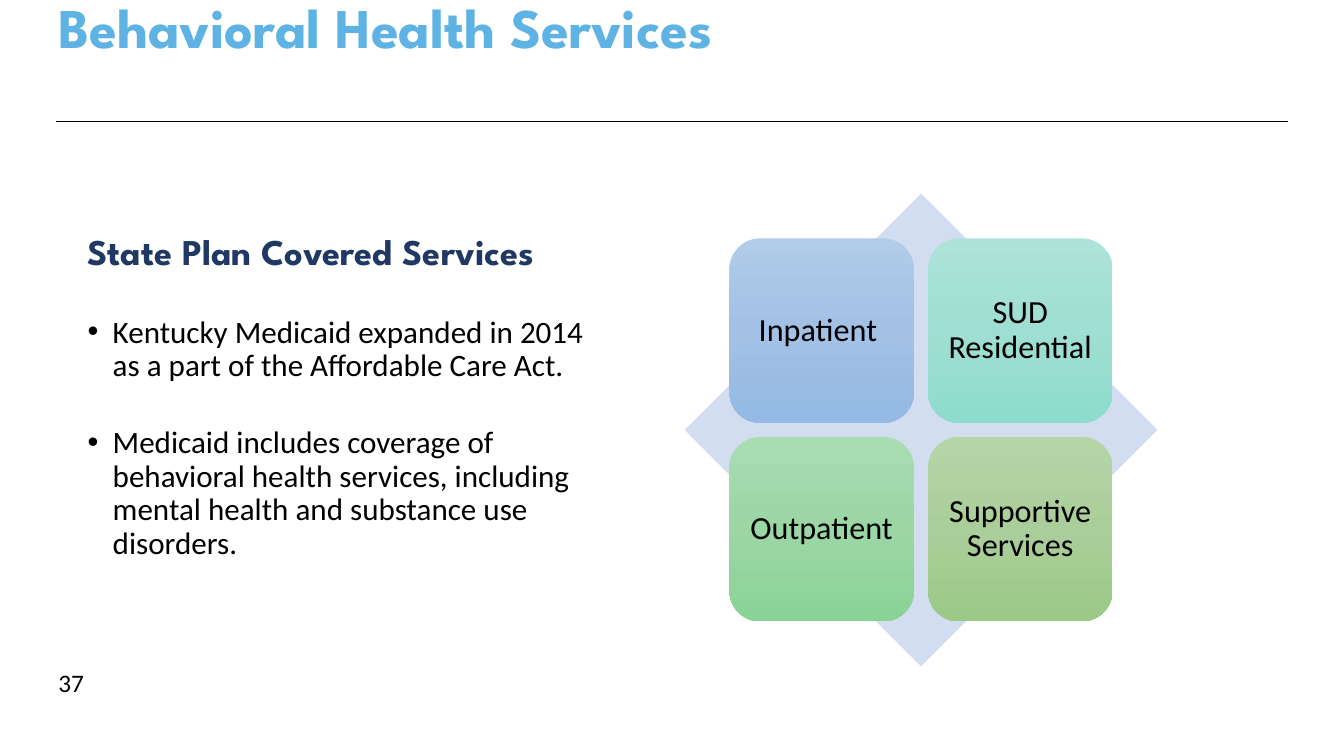
from copy import deepcopy

from lxml import etree
from pptx import Presentation
from pptx.dml.color import RGBColor
from pptx.enum.shapes import MSO_CONNECTOR, MSO_SHAPE
from pptx.enum.text import MSO_ANCHOR, PP_ALIGN
from pptx.oxml.ns import qn
from pptx.util import Inches, Pt

LEFT, CENTER = PP_ALIGN.LEFT, PP_ALIGN.CENTER
TOP, MIDDLE = MSO_ANCHOR.TOP, MSO_ANCHOR.MIDDLE
DIAMOND, ROUNDED = MSO_SHAPE.DIAMOND, MSO_SHAPE.ROUNDED_RECTANGLE
STRAIGHT = MSO_CONNECTOR.STRAIGHT

# Content
TITLE = "Behavioral Health Services"
PAGE_NUMBER = "37"
HEADING = "State Plan Covered Services"
POINTS = [
    "Kentucky Medicaid expanded in 2014 as a part of the Affordable Care Act.",
    "Medicaid includes coverage of behavioral health services, including "
    "mental health and substance use disorders.",
]
# Each service with its gradient from top to bottom, row by row
SERVICES = [
    ("Inpatient ", ("B1CBE9", "A3C1E5", "93B9E4")),
    ("SUD Residential", ("ADE3D9", "9FDED2", "8EDCCE")),
    ("Outpatient ", ("AADCB2", "9CD6A5", "8AD396")),
    ("Supportive Services", ("B5D5A7", "AACE9A", "9CC987")),
]

THEME = {
    "display": "League Spartan", "text": "Calibri",
    "sky": "5EB3E4", "navy": "203864", "black": "000000", "pale": "D2DEEF",
    "title": 40, "heading": 25.9, "point": 22.2, "service": 23, "page": 18,
}

# Layout in inches
DIAMOND_LEFT, DIAMOND_TOP, DIAMOND_SIZE = 6.79, 1.92, 4.69
TILE, TILE_PITCH, COLUMNS = 1.83, 1.97, 2
TILE_MARGIN = (DIAMOND_SIZE - TILE - TILE_PITCH) / 2


def write(frame, text, *, size, color, font=THEME["text"], bold=False, align=LEFT,
          spacing=0.9, before=0, bullet=False):
    """Add a paragraph, using the empty first one if nothing is written yet."""
    paragraph = frame.paragraphs[0] if not frame.text else frame.add_paragraph()
    if bullet:
        properties = paragraph._p.get_or_add_pPr()
        properties.set("marL", str(Inches(0.25)))
        properties.set("indent", str(Inches(-0.25)))
        etree.SubElement(properties, qn("a:buFont")).set("typeface", "Arial")
        etree.SubElement(properties, qn("a:buChar")).set("char", "•")
    paragraph.alignment = align
    paragraph.line_spacing = spacing
    paragraph.space_before = Pt(before)
    run = paragraph.add_run()
    run.text = text
    run.font.name, run.font.size, run.font.bold = font, Pt(size), bold
    run.font.color.rgb = RGBColor.from_string(color)


def add_frame(slide, left, top, width, height, margins=(0.1, 0.05)):
    box = slide.shapes.add_textbox(Inches(left), Inches(top), Inches(width), Inches(height))
    return prepare(box.text_frame, margins, TOP)


def prepare(frame, margins, anchor):
    frame.word_wrap = True
    frame.vertical_anchor = anchor
    frame.margin_left = frame.margin_right = Inches(margins[0])
    frame.margin_top = frame.margin_bottom = Inches(margins[1])
    return frame


def add_square(slide, preset, left, top, size):
    square = slide.shapes.add_shape(
        preset, Inches(left), Inches(top), Inches(size), Inches(size))
    square.shadow.inherit = False
    square.line.fill.background()
    return square


def fill_downwards(shape, colors):
    shape.fill.gradient()
    shape.fill.gradient_angle = 270
    stop_list = shape._element.spPr.find(".//" + qn("a:gsLst"))
    stop_list.insert(1, deepcopy(stop_list[0]))
    for stop, color, position in zip(shape.fill.gradient_stops, colors, (0, 0.5, 1)):
        stop.color.rgb = RGBColor.from_string(color)
        stop.position = position


def main():
    deck = Presentation()
    deck.slide_width, deck.slide_height = Inches(13.33), Inches(7.5)
    slide = deck.slides.add_slide(deck.slide_layouts[6])

    # Title and rule
    write(add_frame(slide, 0.48, 0.06, 12.2, 1.45), TITLE, size=THEME["title"],
          color=THEME["sky"], font=THEME["display"], bold=True, spacing=Pt(34.6))
    rule = slide.shapes.add_connector(
        STRAIGHT, Inches(0.56), Inches(1.2), Inches(12.77), Inches(1.2))
    rule.line.width = Pt(0.5)
    rule.line.color.rgb = RGBColor.from_string(THEME["black"])
    etree.SubElement(rule._element.spPr, qn("a:effectLst"))

    # Page number
    write(add_frame(slide, 0.58, 6.67, 0.35, 0.26, margins=(0, 0)), PAGE_NUMBER,
          size=THEME["page"], color=THEME["black"], spacing=Pt(18.1))

    # Covered services
    body = add_frame(slide, 0.77, 2.27, 5.36, 3.93)
    write(body, HEADING, size=THEME["heading"], color=THEME["navy"],
          font=THEME["display"], bold=True)
    for point in POINTS:
        write(body, point, size=THEME["point"], color=THEME["black"],
              before=31, bullet=True)

    # Service tiles on a diamond
    diamond = add_square(slide, DIAMOND, DIAMOND_LEFT, DIAMOND_TOP, DIAMOND_SIZE)
    diamond.fill.solid()
    diamond.fill.fore_color.rgb = RGBColor.from_string(THEME["pale"])
    for index, (service, colors) in enumerate(SERVICES):
        row, column = divmod(index, COLUMNS)
        tile = add_square(slide, ROUNDED,
                          DIAMOND_LEFT + TILE_MARGIN + column * TILE_PITCH,
                          DIAMOND_TOP + TILE_MARGIN + row * TILE_PITCH, TILE)
        fill_downwards(tile, colors)
        write(prepare(tile.text_frame, (0.1, 0.1), MIDDLE), service,
              size=THEME["service"], color=THEME["black"], align=CENTER)

    deck.save("out.pptx")


if __name__ == "__main__":
    main()
